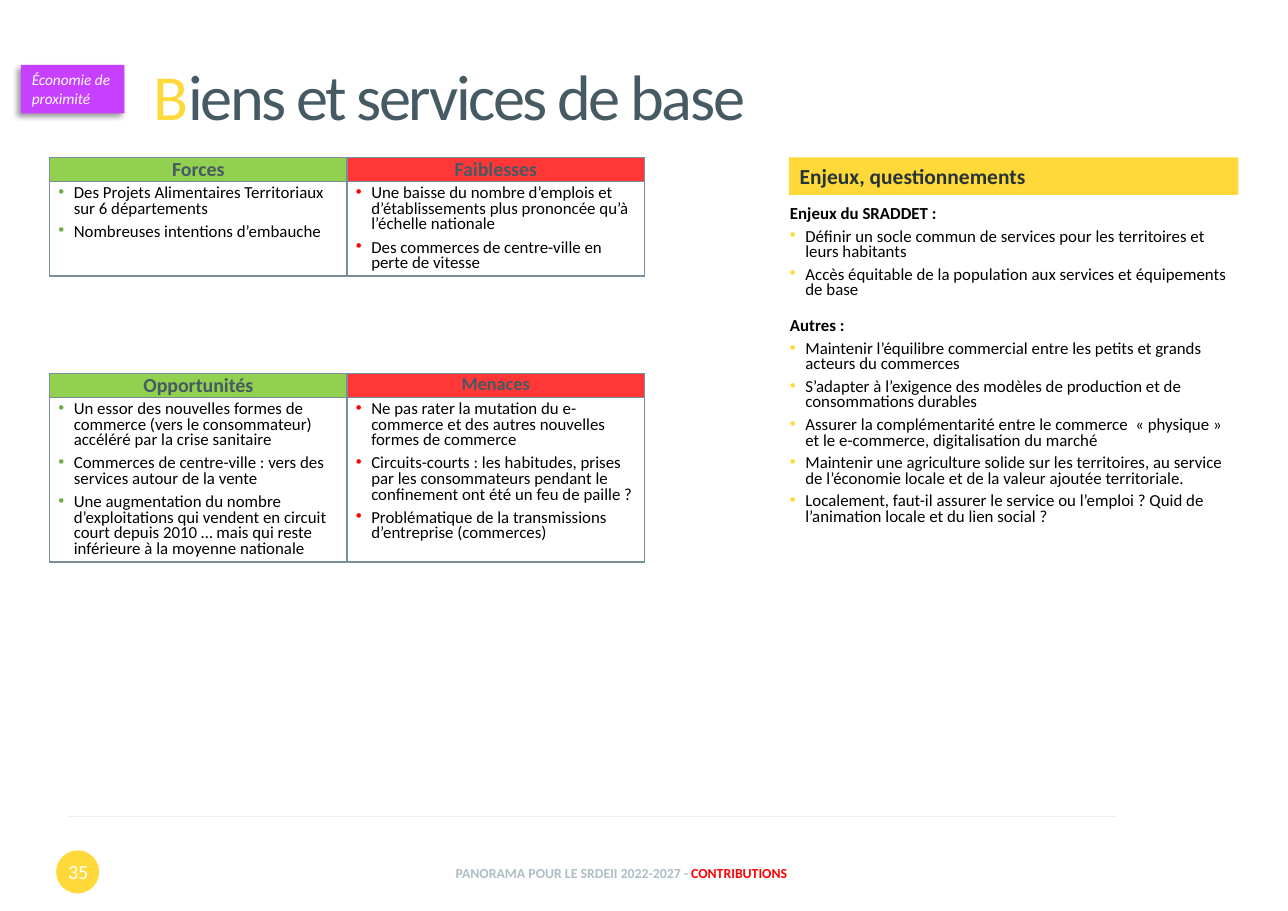
from dataclasses import dataclass

from lxml.etree import SubElement as Sub
from pptx import Presentation as Deck
from pptx.dml.color import RGBColor as Rgb
from pptx.enum.shapes import MSO_CONNECTOR as Link, MSO_SHAPE as Form
from pptx.enum.text import MSO_ANCHOR as Anchor, MSO_AUTO_SIZE as Fit, PP_ALIGN as Align
from pptx.oxml.ns import qn
from pptx.util import Inches, Pt

FONT = "Calibri"
HUE = {
    "gold": "FFD83A", "slate": "465A64", "dark": "263338", "black": "000000",
    "white": "FFFFFF", "lime": "92D050", "leaf": "70AD47", "coral": "FF3737",
    "red": "FF0000", "purple": "C740FF", "edge": "788F9B", "rule": "ECF0F2",
    "mist": "AEBEC4",
}


@dataclass
class Box:
    left: float
    top: float
    width: float
    height: float

    def spot(self) -> list:
        return [Inches(n) for n in (self.left, self.top, self.width, self.height)]


@dataclass
class Pane:
    head: str
    size: float
    fill: str
    dot: str
    items: list[str]


@dataclass
class Grid:
    top: float
    depth: float
    panes: list[Pane]


@dataclass
class Topic:
    head: str
    gap: float
    items: list[str]


GRIDS = [
    Grid(1.43, 0.85, [
        Pane("Forces", 13, "lime", "leaf", [
            "Des Projets Alimentaires Territoriaux sur 6 départements",
            "Nombreuses intentions d’embauche"]),
        Pane("Faiblesses", 13, "coral", "red", [
            "Une baisse du nombre d’emplois et d’établissements plus prononcée qu’à l’échelle nationale",
            "Des commerces de centre-ville en perte de vitesse"]),
    ]),
    Grid(3.39, 1.49, [
        Pane("Opportunités", 13, "lime", "leaf", [
            "Un essor des nouvelles formes de commerce (vers le consommateur) accéléré par la crise sanitaire",
            "Commerces de centre-ville : vers des services autour de la vente",
            "Une augmentation du nombre d’exploitations qui vendent en circuit court depuis 2010 … "
            "mais qui reste inférieure à la moyenne nationale"]),
        Pane("Menaces", 12, "coral", "red", [
            "Ne pas rater la mutation du e-commerce et des autres nouvelles formes de commerce",
            "Circuits-courts : les habitudes, prises par les consommateurs pendant le confinement "
            "ont été un feu de paille ?",
            "Problématique de la transmissions d’entreprise (commerces)"]),
    ]),
]

TOPICS = [
    Topic("Enjeux du SRADDET :", 0, [
        "Définir un socle commun de services pour les territoires et leurs habitants",
        "Accès équitable de la population aux services et équipements de base"]),
    Topic("Autres :", 11, [
        "Maintenir l’équilibre commercial entre les petits et grands acteurs du commerces",
        "S’adapter à l’exigence des modèles de production et de consommations durables",
        "Assurer la complémentarité entre le commerce  « physique » et le e-commerce, "
        "digitalisation du marché",
        "Maintenir une agriculture solide sur les territoires, au service de l’économie locale "
        "et de la valeur ajoutée territoriale.",
        "Localement, faut-il assurer le service ou l’emploi ? Quid de l’animation locale "
        "et du lien social ?"]),
]


def paint(item, hue: str) -> None:
    item.fill.solid()
    item.fill.fore_color.rgb = Rgb.from_string(HUE[hue])


def style(run, size: float, hue: str, bold: bool = False, slant: bool = False) -> None:
    font = run.font
    font.name, font.size, font.bold, font.italic = FONT, Pt(size), bold, slant
    font.color.rgb = Rgb.from_string(HUE[hue])


def inset(item, side: float, end: float) -> None:
    item.margin_left = item.margin_right = Inches(side)
    item.margin_top = item.margin_bottom = Inches(end)


def label(frame, text: str, size: float, hue: str, align=Align.LEFT, anchor=Anchor.TOP,
          bold: bool = False, slant: bool = False) -> None:
    frame.word_wrap = True
    frame.vertical_anchor = anchor
    frame.text = text
    para = frame.paragraphs[0]
    para.alignment = align
    style(para.runs[0], size, hue, bold, slant)


def entry(para, text: str, dot: str = "", gap: float = 2) -> None:
    """Write one tight line of a list; without a dot colour it is a bold heading."""
    para.text = text
    props = para._p.get_or_add_pPr()
    props.set("marL", str(Inches(0.15 if dot else 0.01)))
    props.set("indent", str(Inches(-0.14 if dot else 0)))
    if dot:
        Sub(Sub(props, qn("a:buClr")), qn("a:srgbClr"), val=HUE[dot])
        Sub(props, qn("a:buFont"), typeface="Arial")
        Sub(props, qn("a:buChar"), char="•")
    else:
        Sub(props, qn("a:buNone"))
    para.alignment = Align.LEFT
    para.line_spacing = 0.75
    para.space_before, para.space_after = Pt(gap), Pt(3)
    style(para.runs[0], 11, "black", bold=not dot)


def border(cell) -> None:
    props = cell._tc.get_or_add_tcPr()
    for rank, side in enumerate(("lnL", "lnR", "lnT", "lnB")):
        line = props.makeelement(qn("a:" + side), {"w": str(Pt(1))})
        Sub(Sub(line, qn("a:solidFill")), qn("a:srgbClr"), val=HUE["edge"])
        props.insert(rank, line)


def table(slide, grid: Grid) -> None:
    box = Box(0.45, grid.top, 5.4, 0.22 + grid.depth)
    chart = slide.shapes.add_table(2, len(grid.panes), *box.spot()).table
    chart.first_row = chart.horz_banding = False
    chart.rows[0].height, chart.rows[1].height = Inches(0.22), Inches(grid.depth)
    for col, pane in enumerate(grid.panes):
        head, body = chart.cell(0, col), chart.cell(1, col)
        inset(head, 0.07, 0)
        inset(body, 0.07, 0.04)
        label(head.text_frame, pane.head, pane.size, "slate", Align.CENTER, bold=True)
        frame = body.text_frame
        for rank, text in enumerate(pane.items):
            para = frame.add_paragraph() if rank else frame.paragraphs[0]
            entry(para, text, pane.dot, 2 if rank else 0)
        for cell, fill in ((head, pane.fill), (body, "white")):
            paint(cell, fill)
            border(cell)


def block(slide, form, box: Box, fill: str):
    shape = slide.shapes.add_shape(form, *box.spot())
    shape.shadow.inherit = False
    paint(shape, fill)
    shape.line.fill.background()
    return shape


def place(holder, box: Box):
    holder.left, holder.top, holder.width, holder.height = box.spot()
    frame = holder.text_frame
    frame.auto_size, frame.word_wrap = Fit.NONE, True
    return frame


def main() -> None:
    deck = Deck()
    deck.slide_width, deck.slide_height = Inches(11.69), Inches(8.27)
    slide = deck.slides.add_slide(deck.slide_layouts[1])
    shapes = slide.shapes

    # Title
    frame = place(shapes.title, Box(1.29, 0.12, 9.94, 1.12))
    label(frame, "B", 42, "gold", anchor=Anchor.BOTTOM)
    para = frame.paragraphs[0]
    para.line_spacing = 0.7
    rest = para.add_run()
    rest.text = "iens et services de base"
    style(rest, 42, "slate")
    for run in para.runs:
        run.font._element.set("spc", "-160")

    # List of issues, under its heading band
    holder = slide.placeholders[1]
    frame = place(holder, Box(7.16, 1.83, 4.08, 5.27))
    paint(holder, "white")
    inset(frame, 0, 0.05)
    frame.vertical_anchor = Anchor.TOP
    for rank, topic in enumerate(TOPICS):
        para = frame.add_paragraph() if rank else frame.paragraphs[0]
        entry(para, topic.head, gap=topic.gap)
        for text in topic.items:
            entry(frame.add_paragraph(), text, "gold")
    band = block(slide, Form.RECTANGLE, Box(7.16, 1.43, 4.08, 0.34), "gold")
    label(band.text_frame, "Enjeux, questionnements", 14, "dark", Align.JUSTIFY, bold=True)

    # Strengths and risks
    for grid in GRIDS:
        table(slide, grid)

    # Theme tag with its soft shadow
    tag = block(slide, Form.RECTANGLE, Box(0.19, 0.59, 0.94, 0.44), "purple")
    label(tag.text_frame, "Économie de proximité", 10, "white", slant=True)
    glow = Sub(tag._element.spPr.find(qn("a:effectLst")), qn("a:outerShdw"), blurRad=str(Pt(4)),
               dist=str(Pt(3)), dir=str(135 * 60000), algn="tr", rotWithShape="0")
    Sub(Sub(glow, qn("a:srgbClr"), val=HUE["black"]), qn("a:alpha"), val="40000")

    # Footer: rule, page number and caption
    rule = shapes.add_connector(Link.STRAIGHT, Inches(0.62), Inches(7.41), Inches(10.14), Inches(7.41))
    rule.line.color.rgb = Rgb.from_string(HUE["rule"])
    rule.line.width = Pt(0.5)
    Sub(rule._element.spPr, qn("a:effectLst"))
    block(slide, Form.OVAL, Box(0.51, 7.72, 0.39, 0.39), "gold")
    page = shapes.add_textbox(*Box(0.45, 7.69, 0.52, 0.44).spot())
    label(page.text_frame, "35", 13.2, "white", Align.CENTER, Anchor.MIDDLE)
    foot = shapes.add_textbox(*Box(1.12, 7.71, 9.04, 0.44).spot())
    label(foot.text_frame, "PANORAMA POUR LE SRDEII 2022-2027 - ", 9, "mist",
          Align.CENTER, Anchor.MIDDLE, bold=True)
    last = foot.text_frame.paragraphs[0].add_run()
    last.text = "CONTRIBUTIONS"
    style(last, 9, "red", bold=True)

    deck.save("out.pptx")


if __name__ == "__main__":
    main()
